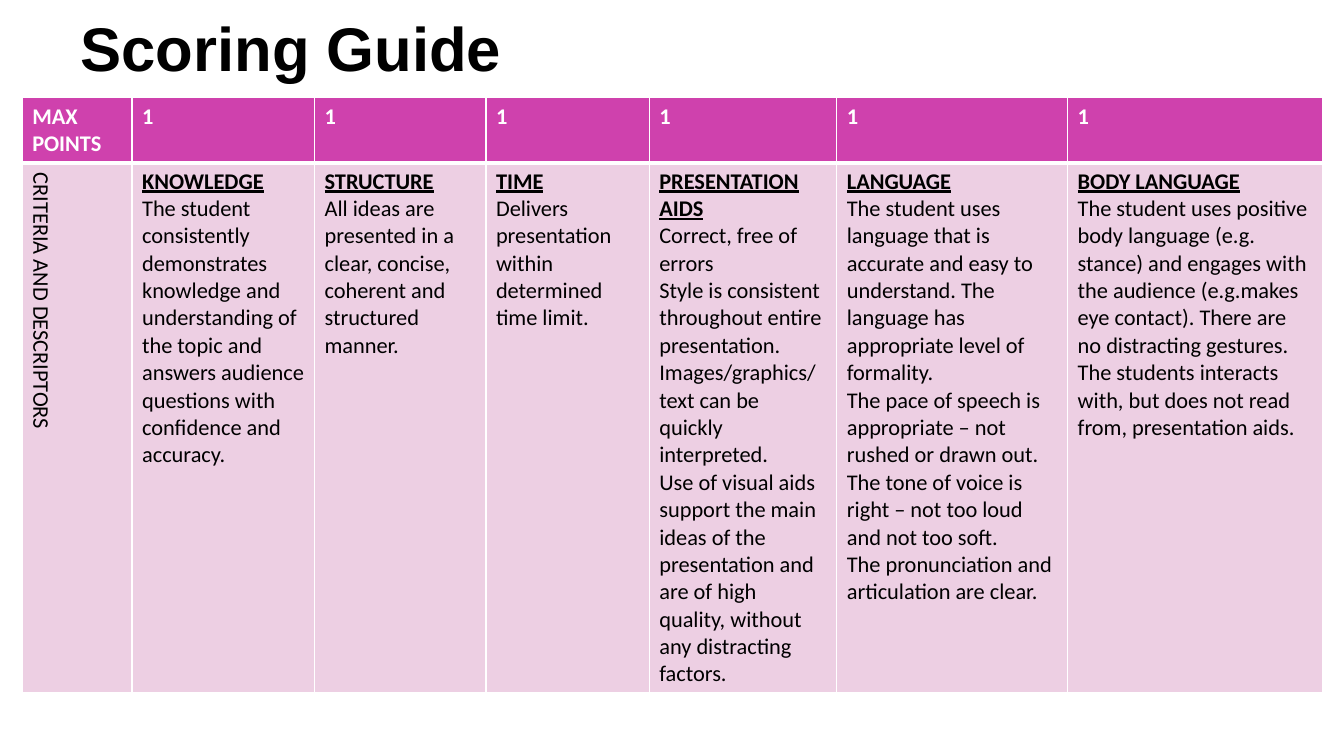
from copy import deepcopy
from pptx import Presentation
from pptx.dml.color import RGBColor as RGB
from pptx.enum.text import MSO_ANCHOR as Anchor, MSO_AUTO_SIZE as Fit, PP_ALIGN as Align
from pptx.oxml import parse_xml
from pptx.oxml.ns import nsdecls, qn
from pptx.util import Inches, Pt

BLACK = RGB(0x00, 0x00, 0x00)
WHITE = RGB(0xFF, 0xFF, 0xFF)
PINK = RGB(0xCF, 0x41, 0xAD)
PALE = RGB(0xED, 0xCF, 0xE3)

COLS = [1.09, 1.81, 1.7, 1.62, 1.86, 2.29, 2.53]
ROWS = [0.51, 4.79]
HEAD = ["MAX POINTS"] + ["1"] * 6
SIDE = "CRITERIA AND DESCRIPTORS"
# Each criterion: heading, then its descriptors
CRITERIA = [
    ["KNOWLEDGE",
     "The student consistently demonstrates knowledge and understanding of the "
     "topic and answers audience questions with confidence and accuracy."],
    ["STRUCTURE",
     "All ideas are presented in a clear, concise, coherent and structured manner."],
    ["TIME",
     "Delivers presentation within determined time limit."],
    ["PRESENTATION AIDS",
     "Correct, free of errors\vStyle is consistent throughout entire presentation.",
     "Images/graphics/text can be quickly interpreted.",
     "Use of visual aids support the main ideas of the presentation and are of "
     "high quality, without any distracting factors."],
    ["LANGUAGE",
     "The student uses language that is accurate and easy to understand. "
     "The language has appropriate level of formality.",
     "The pace of speech is appropriate – not rushed or drawn out.",
     "The tone of voice is right – not too loud and not too soft.",
     "The pronunciation and articulation are clear."],
    ["BODY LANGUAGE",
     "The student uses positive body language (e.g. stance) and engages with the "
     "audience (e.g.makes eye contact). There are no distracting gestures.",
     "The students interacts with, but does not read from, presentation aids."],
]


def write(para, text, size=16, face="Calibri", color=BLACK, bold=False, line=False):
    para.text = text
    para.alignment = Align.LEFT
    for run in para.runs:
        font = run.font
        font.size, font.name = Pt(size), face
        font.bold, font.underline = bold, line
        font.color.rgb = color
    # Line breaks take the format of the text around them
    for brk in para._p.findall(qn("a:br")):
        brk.append(deepcopy(para.runs[0]._r.rPr))


def style(cell, fill, top, low):
    props = cell._tc.get_or_add_tcPr()
    for side, width in zip("LRTB", (1, 1, top, low)):
        props.append(parse_xml(
            f'<a:ln{side} {nsdecls("a")} w="{Pt(width)}"><a:solidFill>'
            f'<a:srgbClr val="{WHITE}"/></a:solidFill></a:ln{side}>'))
    cell.fill.solid()
    cell.fill.fore_color.rgb = fill


def add_title(slide, text, left, top, width, height):
    title = slide.shapes.title
    title.left, title.top = Inches(left), Inches(top)
    title.width, title.height = Inches(width), Inches(height)
    frame = title.text_frame
    frame.auto_size = Fit.NONE
    frame.vertical_anchor = Anchor.MIDDLE
    write(frame.paragraphs[0], text, size=44, face="Arial", bold=True)
    frame.paragraphs[0].line_spacing = 0.9


def add_rubric(slide, left, top):
    grid = slide.shapes.add_table(
        len(ROWS), len(COLS), Inches(left), Inches(top),
        Inches(sum(COLS)), Inches(sum(ROWS))).table
    for col, width in zip(grid.columns, COLS):
        col.width = Inches(width)
    for row, height in zip(grid.rows, ROWS):
        row.height = Inches(height)

    # Points row
    for i, text in enumerate(HEAD):
        cell = grid.cell(0, i)
        style(cell, PINK, 1, 3)
        write(cell.text_frame.paragraphs[0], text, color=WHITE, bold=True)

    # Criteria row, with a turned label in its first cell
    for i, parts in enumerate([[SIDE]] + CRITERIA):
        cell = grid.cell(1, i)
        style(cell, PALE, 3, 1)
        frame = cell.text_frame
        for j, text in enumerate(parts):
            para = frame.add_paragraph() if j else frame.paragraphs[0]
            top_line = i > 0 and j == 0
            write(para, text, bold=top_line, line=top_line)
    grid.cell(1, 0)._tc.tcPr.set("vert", "vert")


def main():
    deck = Presentation()
    deck.slide_width, deck.slide_height = Inches(13.33), Inches(7.5)
    slide = deck.slides.add_slide(deck.slide_layouts[5])
    add_title(slide, "Scoring Guide", 0.7, 0.06, 11.5, 0.91)
    add_rubric(slide, 0.22, 0.97)
    deck.save("out.pptx")


if __name__ == "__main__":
    main()
